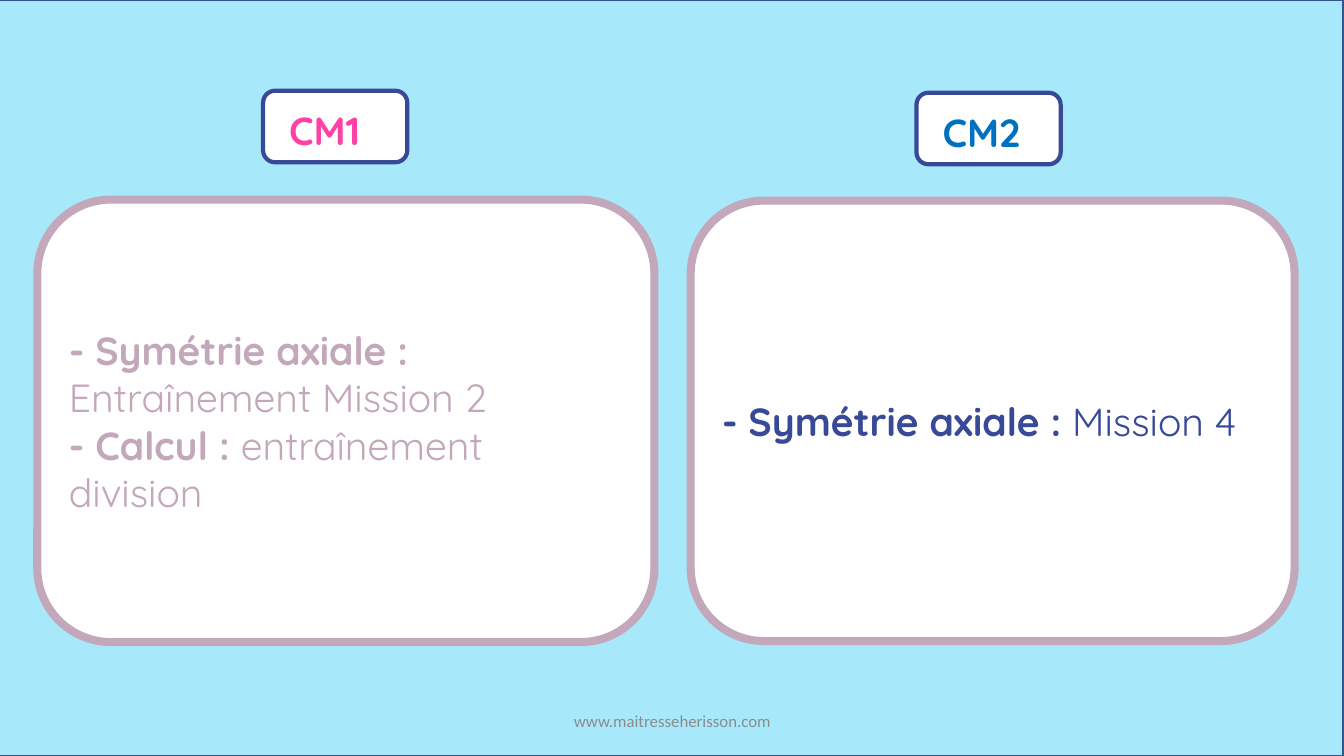
from pptx import Presentation
from pptx import util as u
from pptx.dml.color import RGBColor
from pptx.enum import shapes, text

PX = 9144
WIDTH, HEIGHT = 1333, 750
COLORS = {
    "sky": "A7E8FB", "edge": "325491", "white": "FFFFFF", "navy": "374997",
    "mauve": "C3A7BA", "pink": "FF41A5", "blue": "0070C0", "grey": "8C8C8C",
}
COLUMNS = [
    {
        "label": "CM1", "label_color": "pink", "label_box": (261, 90, 143, 71),
        "panel_box": (37, 198, 612, 439), "text_color": "mauve",
        "tasks": [("- Symétrie axiale : ", "Entraînement Mission 2"),
                  ("- Calcul : ", "entraînement division")],
    },
    {
        "label": "CM2", "label_color": "blue", "label_box": (909, 92, 143, 71),
        "panel_box": (685, 199, 599, 437), "text_color": "navy",
        "tasks": [("- Symétrie axiale : ", "Mission 4")],
    },
]


def color(name):
    """Return the named colour."""
    return RGBColor.from_string(COLORS[name])


def emu(box):
    """Turn a box in px into EMU lengths."""
    return [u.Emu(length * PX) for length in box]


def add_box(slide, kind, box, fill, line, weight):
    """Draw a filled and outlined shape."""
    shape = slide.shapes.add_shape(kind, *emu(box))
    shape.shadow.inherit = False
    shape.fill.solid()
    shape.fill.fore_color.rgb = color(fill)
    shape.line.color.rgb = color(line)
    shape.line.width = u.Pt(weight)
    return shape


def add_run(paragraph, words, ink, size=28, bold=False, font="Quicksand"):
    """Append one styled run."""
    run = paragraph.add_run()
    run.text = words
    run.font.name = font
    run.font.size = u.Pt(size)
    run.font.bold = bold
    run.font.color.rgb = color(ink)


def add_label(slide, box, words, ink):
    """Draw a class label with its name."""
    left, top, width, height = box
    add_box(slide, shapes.MSO_SHAPE.ROUNDED_RECTANGLE, box, "white", "navy", 3)
    name = slide.shapes.add_textbox(*emu((left + 16, top + 11, width - 33, height - 14)))
    frame = name.text_frame
    frame.word_wrap = True
    frame.auto_size = text.MSO_AUTO_SIZE.SHAPE_TO_FIT_TEXT
    add_run(frame.paragraphs[0], words, ink, bold=True)


def add_panel(slide, box, tasks, ink):
    """Draw a rounded panel listing the tasks of a class."""
    panel = add_box(slide, shapes.MSO_SHAPE.ROUNDED_RECTANGLE, box, "white", "mauve", 5.75)
    frame = panel.text_frame
    frame.word_wrap = True
    frame.vertical_anchor = text.MSO_ANCHOR.MIDDLE
    for index, (subject, work) in enumerate(tasks):
        paragraph = frame.add_paragraph() if index else frame.paragraphs[0]
        paragraph.alignment = text.PP_ALIGN.LEFT
        add_run(paragraph, subject, ink, bold=True)
        add_run(paragraph, work, ink)


def add_footer(slide, box):
    """Write the centred web address."""
    frame = slide.shapes.add_textbox(*emu(box)).text_frame
    frame.word_wrap = True
    frame.vertical_anchor = text.MSO_ANCHOR.MIDDLE
    paragraph = frame.paragraphs[0]
    paragraph.alignment = text.PP_ALIGN.CENTER
    add_run(paragraph, "www.maitresseherisson.com", "grey", size=12, font="Calibri")


def main():
    """Build and save the slide."""
    presentation = Presentation()
    presentation.slide_width, presentation.slide_height = emu((WIDTH, HEIGHT))
    slide = presentation.slides.add_slide(presentation.slide_layouts[6])
    add_box(slide, shapes.MSO_SHAPE.RECTANGLE, (-1, 0, WIDTH, HEIGHT), "sky", "edge", 1)
    for column in COLUMNS:
        add_label(slide, column["label_box"], column["label"], column["label_color"])
        add_panel(slide, column["panel_box"], column["tasks"], column["text_color"])
    add_footer(slide, (442, 695, 450, 40))
    presentation.save("out.pptx")


if __name__ == "__main__":
    main()
